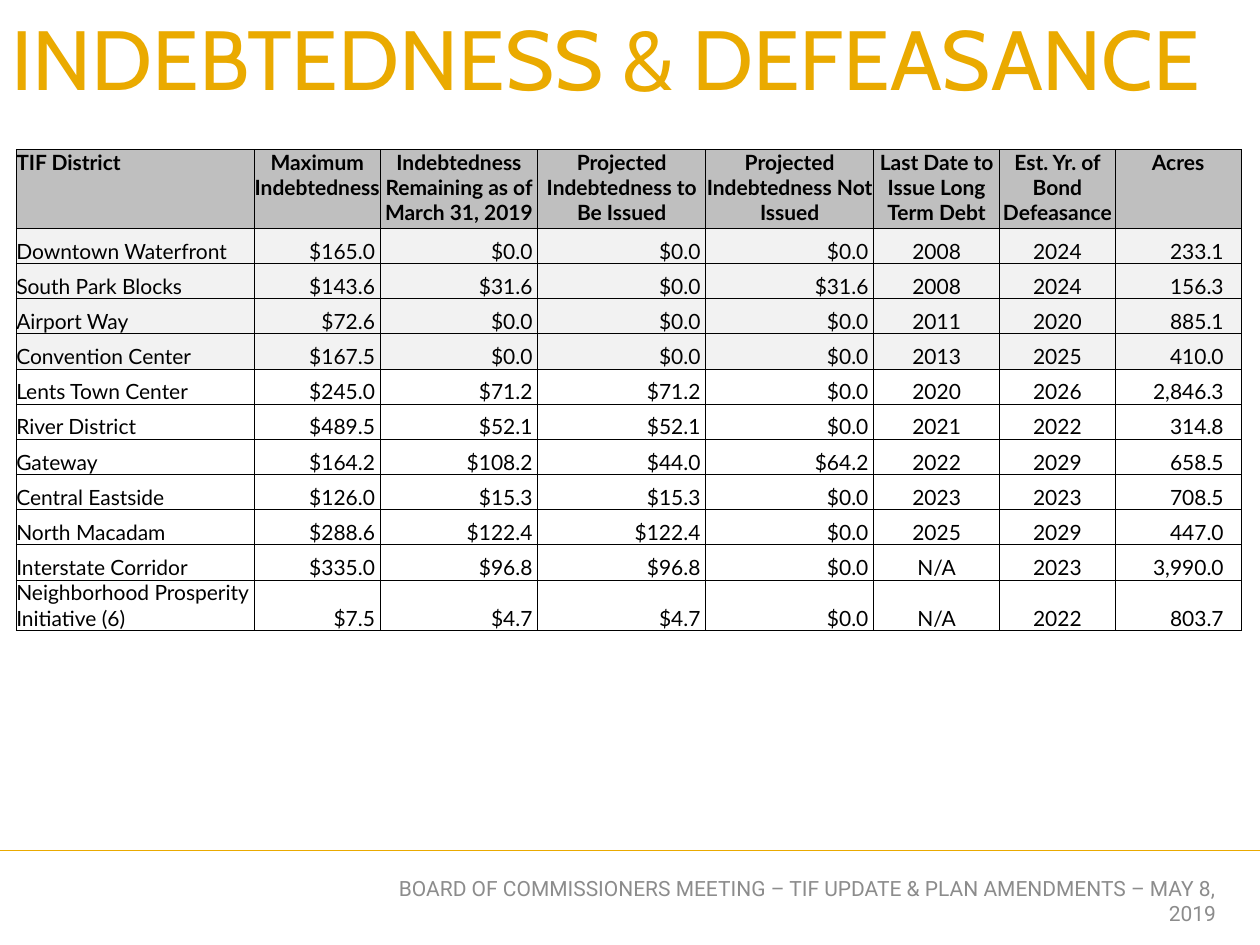
from lxml import etree
from pptx import Presentation
from pptx import util as u
from pptx.dml import color as dye
from pptx.enum import shapes, text
from pptx.oxml import ns

HUES = {"gold": "EAAA00", "black": "000000", "white": "FFFFFF",
        "head": "BFBFBF", "pale": "F2F2F2", "gray": "8C8C8C"}
LEFT, MID, RIGHT = (text.PP_ALIGN.LEFT, text.PP_ALIGN.CENTER,
                    text.PP_ALIGN.RIGHT)
TOP, CORE, BASE = (text.MSO_ANCHOR.TOP, text.MSO_ANCHOR.MIDDLE,
                   text.MSO_ANCHOR.BOTTOM)

HEADS = ["TIF District", "Maximum Indebtedness",
         "Indebtedness Remaining as of March 31, 2019",
         "Projected Indebtedness to Be Issued",
         "Projected Indebtedness Not Issued",
         "Last Date to Issue Long Term Debt",
         "Est. Yr. of Bond Defeasance", "Acres"]
PAST = [
    ["Downtown Waterfront", "$165.0", "$0.0", "$0.0", "$0.0", "2008", "2024", "233.1"],
    ["South Park Blocks", "$143.6", "$31.6", "$0.0", "$31.6", "2008", "2024", "156.3"],
    ["Airport Way", "$72.6", "$0.0", "$0.0", "$0.0", "2011", "2020", "885.1"],
    ["Convention Center", "$167.5", "$0.0", "$0.0", "$0.0", "2013", "2025", "410.0"],
]
LIVE = [
    ["Lents Town Center", "$245.0", "$71.2", "$71.2", "$0.0", "2020", "2026", "2,846.3"],
    ["River District", "$489.5", "$52.1", "$52.1", "$0.0", "2021", "2022", "314.8"],
    ["Gateway", "$164.2", "$108.2", "$44.0", "$64.2", "2022", "2029", "658.5"],
    ["Central Eastside", "$126.0", "$15.3", "$15.3", "$0.0", "2023", "2023", "708.5"],
    ["North Macadam", "$288.6", "$122.4", "$122.4", "$0.0", "2025", "2029", "447.0"],
    ["Interstate Corridor", "$335.0", "$96.8", "$96.8", "$0.0", "N/A", "2023", "3,990.0"],
    ["Neighborhood Prosperity Initiative (6)", "$7.5", "$4.7", "$4.7", "$0.0", "N/A", "2022", "803.7"],
]
WIDTHS = [136, 72, 90, 96, 96, 72, 66, 72]
ALIGNS = [LEFT, RIGHT, RIGHT, RIGHT, RIGHT, MID, MID, RIGHT]
PADS = [0, 3, 3, 3, 3, 0, 0, 10]


def assign(item, vals):
    for key, val in vals.items():
        setattr(item, key, val)


class Deck:
    def __init__(self, wide, high):
        self.show = Presentation()
        assign(self.show, {"slide_width": u.Pt(wide), "slide_height": u.Pt(high)})
        self.slide = self.show.slides.add_slide(self.show.slide_layouts[6])
        self.fonts = {
            "title": {"name": "Cabin", "size": u.Pt(48), "bold": False},
            "head": {"name": "Lato", "size": u.Pt(12), "bold": True},
            "body": {"name": "Lato", "size": u.Pt(12), "bold": False},
            "foot": {"name": "Roboto", "size": u.Pt(12), "bold": False},
        }

    def color(self, hue):
        return dye.RGBColor.from_string(HUES[hue])

    def paint(self, fill, hue):
        fill.solid()
        fill.fore_color.rgb = self.color(hue)

    def put(self, frame, words, style, hue, align):
        para = frame.paragraphs[0]
        para.alignment = align
        run = para.add_run()
        run.text = words
        assign(run.font, self.fonts[style])
        run.font.color.rgb = self.color(hue)

    def line(self, start, end, hue, width):
        rule = self.slide.shapes.add_connector(
            shapes.MSO_CONNECTOR.STRAIGHT, *map(u.Pt, start + end))
        rule.line.width = u.Pt(width)
        rule.line.color.rgb = self.color(hue)
        etree.SubElement(rule.element.spPr, ns.qn("a:effectLst"))

    def title(self, box, words):
        bar = self.slide.shapes.add_shape(
            shapes.MSO_SHAPE.RECTANGLE, *map(u.Pt, box))
        bar.shadow.inherit = False
        self.paint(bar.fill, "white")
        bar.line.fill.background()
        assign(bar.text_frame, {
            "word_wrap": True, "vertical_anchor": TOP,
            "auto_size": text.MSO_AUTO_SIZE.SHAPE_TO_FIT_TEXT})
        self.put(bar.text_frame, words, "title", "gold", LEFT)

    def label(self, box, words):
        frame = self.slide.shapes.add_textbox(*map(u.Pt, box)).text_frame
        assign(frame, {"word_wrap": True, "vertical_anchor": CORE})
        self.put(frame, words, "foot", "gray", RIGHT)

    def edge(self, cell):
        props = cell._tc.get_or_add_tcPr()
        for side in ("lnL", "lnR", "lnT", "lnB"):
            rim = etree.SubElement(props, ns.qn("a:" + side), w=str(u.Pt(0.5)))
            fill = etree.SubElement(rim, ns.qn("a:solidFill"))
            etree.SubElement(fill, ns.qn("a:srgbClr"), val=HUES["black"])

    def cell(self, cell, words, style, hue, align, pad, anchor):
        assign(cell, {"margin_left": 0, "margin_top": 0, "margin_bottom": 0,
                      "margin_right": u.Pt(pad), "vertical_anchor": anchor})
        self.edge(cell)
        self.paint(cell.fill, hue)
        self.put(cell.text_frame, words, style, "black", align)

    def table(self, left, top, first, step):
        rows = [HEADS] + PAST + LIVE
        high = first + step * (len(rows) - 1)
        grid = self.slide.shapes.add_table(
            len(rows), len(HEADS),
            *map(u.Pt, (left, top, sum(WIDTHS), high))).table
        assign(grid, {"first_row": False, "horz_banding": False})
        for col, width in zip(grid.columns, WIDTHS):
            col.width = u.Pt(width)
        for r, row in enumerate(rows):
            grid.rows[r].height = u.Pt(step if r else first)
            hue = "pale" if r <= len(PAST) else "white"
            for c, words in enumerate(row):
                if r:
                    look = ("body", hue, ALIGNS[c], PADS[c], BASE)
                else:
                    look = ("head", "head", MID if c else LEFT, 0, TOP)
                self.cell(grid.cell(r, c), words, *look)


def main():
    deck = Deck(720, 540)
    deck.line((0, 486), (720, 486), "gold", 0.5)
    deck.title((-0.7, 0, 720, 65.5), "INDEBTEDNESS & DEFEASANCE")
    deck.table(9.3, 85.5, 45, 20.1)
    deck.label((198, 500.4, 504, 28.8),
               "BOARD OF COMMISSIONERS MEETING – TIF UPDATE & PLAN AMENDMENTS – MAY 8, 2019")
    deck.show.save("out.pptx")


if __name__ == "__main__":
    main()
